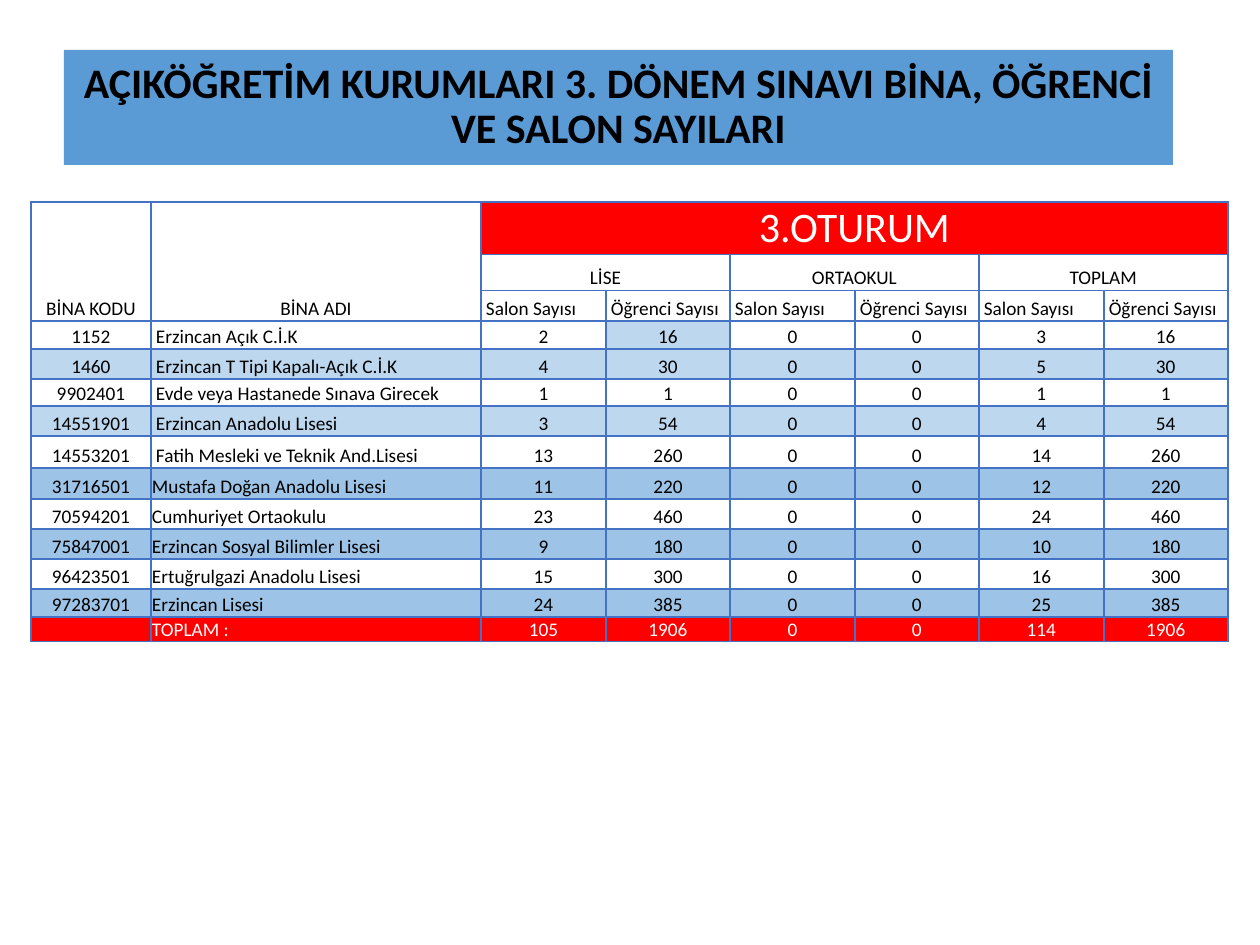
from pptx import Presentation
from pptx.dml.color import RGBColor
from pptx.enum.shapes import MSO_SHAPE
from pptx.enum.text import MSO_ANCHOR, PP_ALIGN
from pptx.oxml.ns import qn
from pptx.util import Pt
from lxml.etree import SubElement

SCALE = 914400 / 126
BLACK = RGBColor(0x00, 0x00, 0x00)
WHITE = RGBColor(0xFF, 0xFF, 0xFF)
RED = RGBColor(0xFF, 0x00, 0x00)
BLUE = RGBColor(0x5B, 0x9B, 0xD5)
PALE = RGBColor(0xBD, 0xD7, 0xEE)
SKY = RGBColor(0x9D, 0xC3, 0xE6)
EDGE = RGBColor(0x44, 0x72, 0xC4)

COLS = [120, 330] + [125, 124] * 3
HEIGHTS = [52, 36, 31, 28, 30, 27, 30, 32, 31, 30, 30, 30, 28, 23]

# Code, name, halls and students of lise, halls in total, row fill
SITES = [
    ("1152", "Erzincan Açık C.İ.K", 2, 16, 3, WHITE),
    ("1460", "Erzincan T Tipi Kapalı-Açık C.İ.K", 4, 30, 5, PALE),
    ("9902401", "Evde veya Hastanede Sınava Girecek", 1, 1, 1, WHITE),
    ("14551901", "Erzincan Anadolu Lisesi", 3, 54, 4, PALE),
    ("14553201", "Fatih Mesleki ve Teknik And.Lisesi", 13, 260, 14, WHITE),
    ("31716501", "Mustafa Doğan Anadolu Lisesi", 11, 220, 12, SKY),
    ("70594201", "Cumhuriyet Ortaokulu", 23, 460, 24, WHITE),
    ("75847001", "Erzincan Sosyal Bilimler Lisesi", 9, 180, 10, SKY),
    ("96423501", "Ertuğrulgazi Anadolu Lisesi", 15, 300, 16, WHITE),
    ("97283701", "Erzincan Lisesi", 24, 385, 25, SKY),
    ("", "TOPLAM :", 105, 1906, 114, RED),
]


def px(num):
    return round(num * SCALE)


class Deck:
    font = "Calibri"
    size = 11

    def __init__(self, wide, high):
        self.prs = Presentation()
        self.prs.slide_width, self.prs.slide_height = px(wide), px(high)
        self.slide = self.prs.slides.add_slide(self.prs.slide_layouts[6])

    def style(self, para, size, color, align, bold=False):
        para.alignment = align
        font = para.font
        font.name, font.size, font.bold = self.font, Pt(size), bold
        font.color.rgb = color

    def title(self, text, x, y, w, h):
        box = self.slide.shapes.add_shape(
            MSO_SHAPE.RECTANGLE, px(x), px(y), px(w), px(h))
        box.shadow.inherit = False
        box.fill.solid()
        box.fill.fore_color.rgb = BLUE
        box.line.fill.background()
        frame = box.text_frame
        frame.word_wrap = True
        frame.vertical_anchor = MSO_ANCHOR.MIDDLE
        para = frame.paragraphs[0]
        para.text = text
        para.line_spacing = 0.9
        self.style(para, 24, BLACK, PP_ALIGN.CENTER, True)

    def table(self, x, y, cols, rows):
        grid = self.slide.shapes.add_table(
            len(rows), len(cols), px(x), px(y), px(sum(cols)), px(sum(rows))).table
        for col, wide in zip(grid.columns, cols):
            col.width = px(wide)
        for row, high in zip(grid.rows, rows):
            row.height = px(high)
        for cell in grid.iter_cells():
            self.frame(cell)
        return grid

    def frame(self, cell):
        # Thin edges, then the fill, as the schema orders them
        props = cell._tc.get_or_add_tcPr()
        for side in ("a:lnL", "a:lnR", "a:lnT", "a:lnB"):
            line = SubElement(props, qn(side), w=str(Pt(1)))
            paint = SubElement(line, qn("a:solidFill"))
            SubElement(paint, qn("a:srgbClr"), val=str(EDGE))
        cell.fill.solid()
        cell.fill.fore_color.rgb = WHITE
        cell.margin_left = cell.margin_right = cell.margin_top = px(1)
        cell.margin_bottom = 0
        cell.vertical_anchor = MSO_ANCHOR.BOTTOM
        # Keeps empty cells from stretching their row
        end = cell.text_frame.paragraphs[0]._p.get_or_add_endParaRPr()
        end.set("sz", str(self.size * 100))

    def cell(self, cell, text, fill=WHITE, size=size, align=PP_ALIGN.CENTER, pad=1):
        cell.fill.fore_color.rgb = fill
        cell.margin_left = px(pad)
        para = cell.text_frame.paragraphs[0]
        para.text = text
        self.style(para, size, WHITE if fill == RED else BLACK, align)

    def save(self):
        self.prs.save("out.pptx")


def main():
    deck = Deck(1260, 945)
    deck.title("AÇIKÖĞRETİM KURUMLARI 3. DÖNEM SINAVI BİNA, ÖĞRENCİ VE SALON SAYILARI",
               64, 50, 1109, 115)
    grid = deck.table(31, 202, COLS, HEIGHTS)

    # Header rows
    for col, text in enumerate(("BİNA KODU", "BİNA ADI")):
        grid.cell(0, col).merge(grid.cell(2, col))
        deck.cell(grid.cell(0, col), text)
    grid.cell(0, 2).merge(grid.cell(0, 7))
    deck.cell(grid.cell(0, 2), "3.OTURUM", RED, 24)
    for num, text in enumerate(("LİSE", "ORTAOKUL", "TOPLAM")):
        col = 2 + 2 * num
        grid.cell(1, col).merge(grid.cell(1, col + 1))
        deck.cell(grid.cell(1, col), text)
        for step, label in enumerate(("Salon Sayısı", "Öğrenci Sayısı")):
            deck.cell(grid.cell(2, col + step), label, align=PP_ALIGN.LEFT, pad=5)

    # Site rows and the total
    for num, (code, name, halls, pupils, total, fill) in enumerate(SITES):
        row = num + 3
        if code:
            deck.cell(grid.cell(row, 0), code, fill)
        else:
            grid.cell(row, 0).fill.fore_color.rgb = fill
        deck.cell(grid.cell(row, 1), name, fill, align=PP_ALIGN.LEFT,
                  pad=5 if num < 5 else 1)
        for col, count in enumerate((halls, pupils, 0, 0, total, pupils), 2):
            deck.cell(grid.cell(row, col), str(count), fill)
    grid.cell(3, 3).fill.fore_color.rgb = PALE

    deck.save()


if __name__ == "__main__":
    main()
